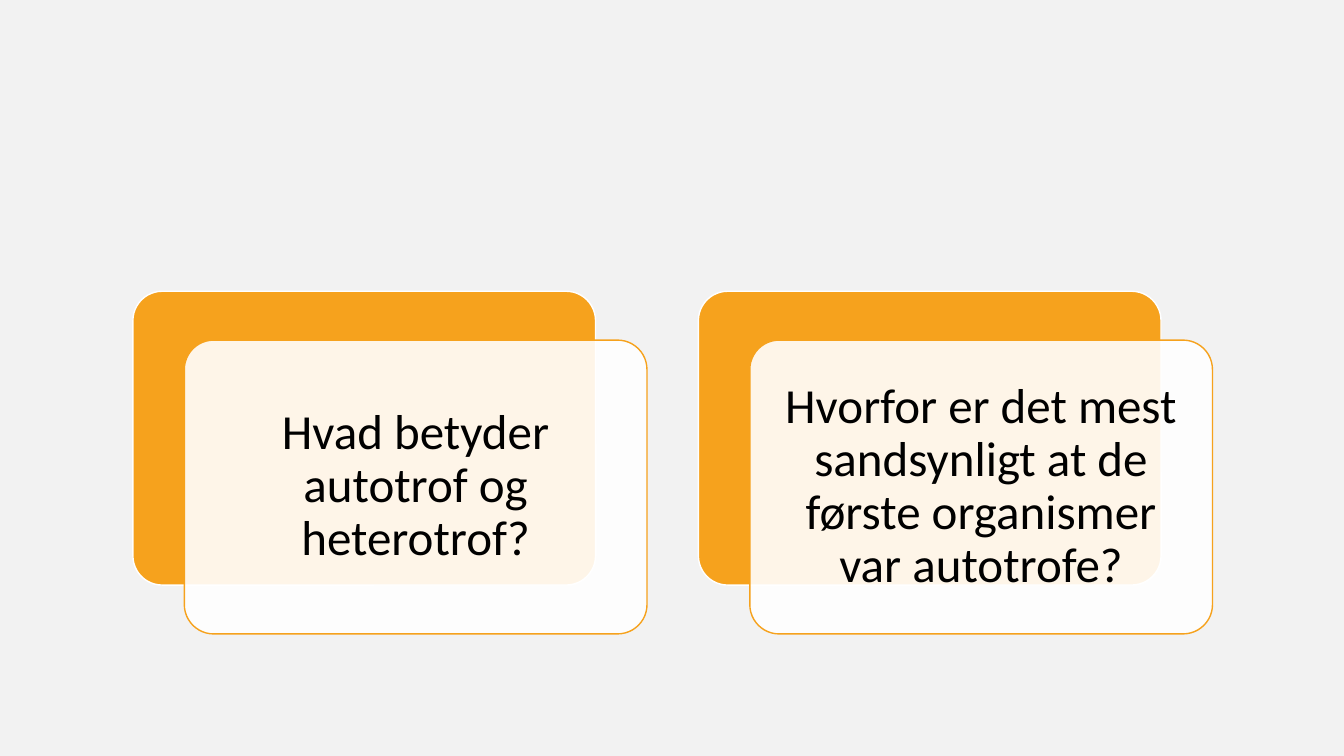
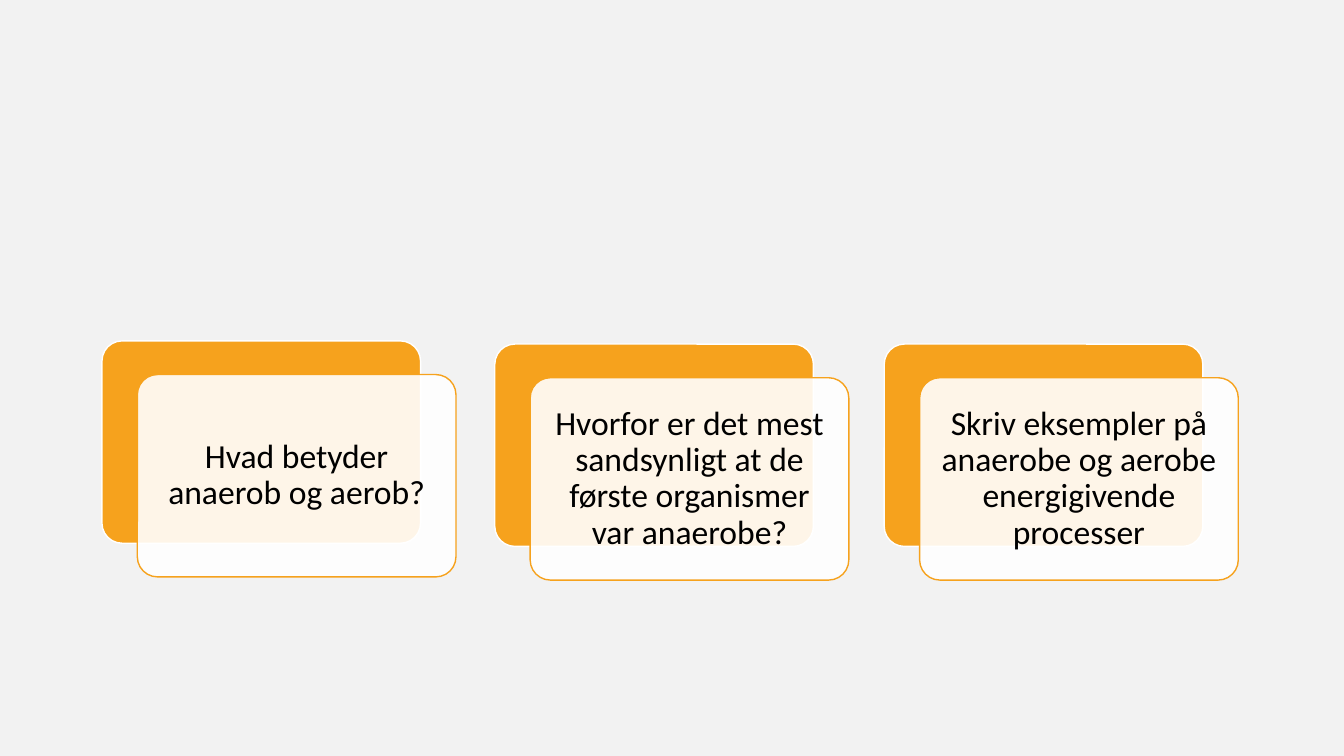
from dataclasses import dataclass

from lxml.etree import SubElement
from pptx import Presentation
from pptx.dml.color import RGBColor
from pptx.enum.shapes import MSO_SHAPE
from pptx.enum.text import MSO_ANCHOR, PP_ALIGN
from pptx.oxml.ns import qn
from pptx.util import Cm, Pt


@dataclass(frozen=True)
class Theme:
    background: RGBColor = RGBColor(0xF2, 0xF2, 0xF2)
    accent: RGBColor = RGBColor(0xF6, 0xA2, 0x1D)
    white: RGBColor = RGBColor(0xFF, 0xFF, 0xFF)
    text: RGBColor = RGBColor(0, 0, 0)
    font: str = "Calibri"
    large: int = 35
    medium: int = 24
    outline: int = 1
    card_opacity: int = 90


THEME = Theme()

# Card proportions, as shares of the card width
HEIGHT = 0.635
SHIFT_RIGHT = 1 / 9
SHIFT_DOWN = 0.95 / 9
PITCH = 1 + 2 * SHIFT_RIGHT


def add_panel(page, left, top, width, fill, line):
    panel = page.shapes.add_shape(
        MSO_SHAPE.ROUNDED_RECTANGLE,
        Cm(left), Cm(top), Cm(width), Cm(width * HEIGHT),
    )
    panel.adjustments[0] = 0.1
    panel.shadow.inherit = False
    panel.fill.solid()
    panel.fill.fore_color.rgb = fill
    panel.line.color.rgb = line
    panel.line.width = Pt(THEME.outline)
    return panel


def set_opacity(panel, percent):
    color = panel.fill._xPr.find(qn("a:solidFill"))[0]
    SubElement(color, qn("a:alpha")).set("val", str(percent * 1000))


def write_question(panel, question, size, inset):
    frame = panel.text_frame
    frame.word_wrap = True
    frame.vertical_anchor = MSO_ANCHOR.MIDDLE
    frame.margin_left = frame.margin_right = Cm(inset)
    frame.margin_top = frame.margin_bottom = Cm(inset)
    para = frame.paragraphs[0]
    para.alignment = PP_ALIGN.CENTER
    para.line_spacing = 0.9
    span = para.add_run()
    span.text = question
    span.font.name = THEME.font
    span.font.size = Pt(size)
    span.font.color.rgb = THEME.text


def add_card(page, left, top, width, question, size, inset):
    """Place a translucent question panel, shifted over a solid one."""
    add_panel(page, left, top, width, THEME.accent, THEME.white)
    front = add_panel(
        page, left + width * SHIFT_RIGHT, top + width * SHIFT_DOWN, width,
        THEME.white, THEME.accent,
    )
    set_opacity(front, THEME.card_opacity)
    write_question(front, question, size, inset)


def add_card_row(page, left, top, width, questions, size, inset):
    for index, question in enumerate(questions):
        card_left = left + index * width * PITCH
        add_card(page, card_left, top, width, question, size, inset)


def add_blank_page(deck):
    return deck.slides.add_slide(deck.slide_layouts[6])


def build_autotroph_page(deck):
    page = add_blank_page(deck)
    questions = [
        "Hvad betyder autotrof og heterotrof?",
        "Hvorfor er det mest sandsynligt at de første organismer var autotrofe?",
    ]
    add_card_row(page, 3.35, 7.34, 11.66, questions, THEME.large, 0.37)


def build_anaerobe_page(deck):
    page = add_blank_page(deck)
    width, inset = 8.03, 0.25
    add_card(page, 2.57, 8.59, width, "Hvad betyder anaerob og aerob?",
             THEME.medium, inset)
    questions = [
        "Hvorfor er det mest sandsynligt at de første organismer var anaerobe?",
        "Skriv eksempler på anaerobe og aerobe energigivende processer",
    ]
    add_card_row(page, 12.47, 8.67, width, questions, THEME.medium, inset)


def main():
    deck = Presentation()
    deck.slide_width, deck.slide_height = Cm(33.87), Cm(19.05)
    background = deck.slide_master.background.fill
    background.solid()
    background.fore_color.rgb = THEME.background
    build_autotroph_page(deck)
    build_anaerobe_page(deck)
    deck.save("out.pptx")


if __name__ == "__main__":
    main()
